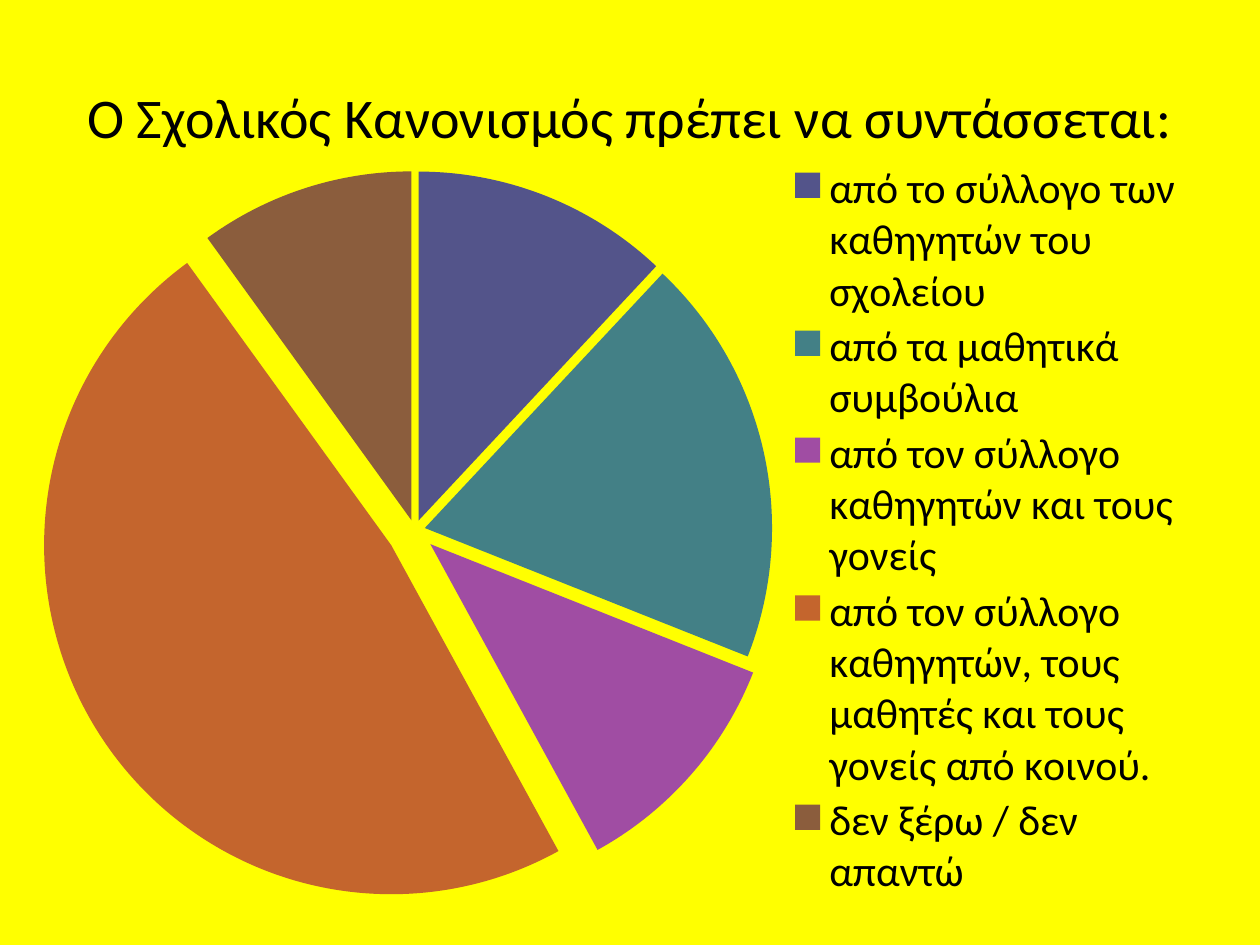
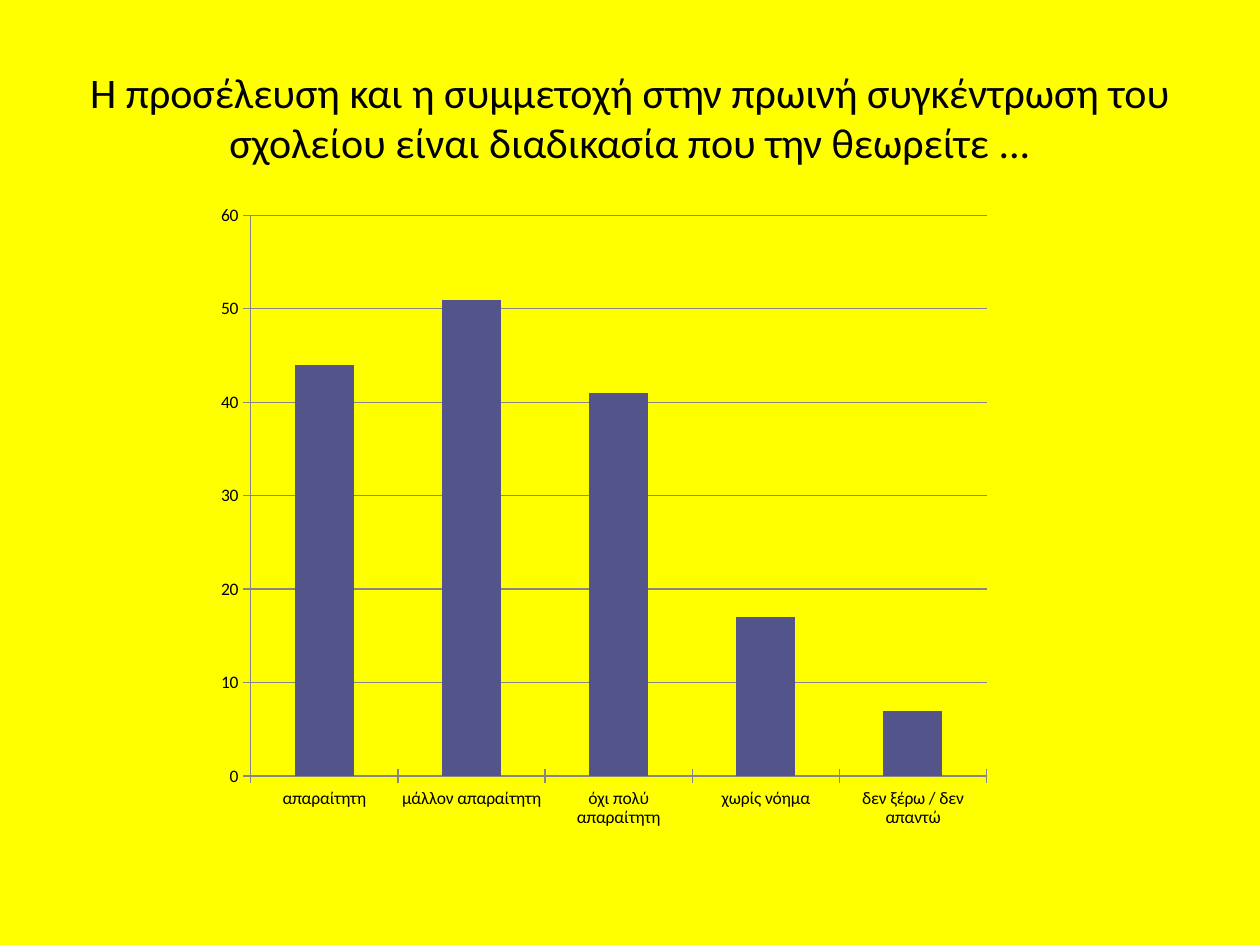
from lxml import etree
from pptx import Presentation
from pptx.chart.data import CategoryChartData
from pptx.dml.color import RGBColor
from pptx.enum.chart import XL_CHART_TYPE as ChartType, XL_LEGEND_POSITION as LegendPos, XL_TICK_MARK as Tick
from pptx.enum.text import MSO_ANCHOR, PP_ALIGN
from pptx.oxml.ns import qn
from pptx.util import Inches, Pt

BACKGROUND, INK, AXIS = "FFFF00", "000000", "868686"
FONT = "Calibri"
SLICE_COLORS = ["53548A", "438086", "A04DA3", "C4652D", "8B5D3D"]
SLICE_EXPLOSIONS = [3, 3, 6, 8, 3]
COMPILERS = [
    ("από το σύλλογο των καθηγητών του σχολείου", 12),
    ("από τα μαθητικά συμβούλια", 19),
    ("από τον σύλλογο καθηγητών και τους γονείς", 11),
    ("από τον σύλλογο καθηγητών, τους μαθητές και τους γονείς από κοινού.", 48),
    ("δεν ξέρω / δεν απαντώ", 10),
]
ASSEMBLY_VIEWS = [
    ("απαραίτητη", 44),
    ("μάλλον απαραίτητη", 51),
    ("όχι πολύ απαραίτητη", 41),
    ("χωρίς νόημα", 17),
    ("δεν ξέρω / δεν απαντώ", 7),
]


def rgb(value):
    return RGBColor.from_string(value)


def paint(fmt, color):
    fmt.fill.solid()
    fmt.fill.fore_color.rgb = rgb(color)


def style_font(font, size):
    for name, value in {"name": FONT, "size": Pt(size), "bold": False}.items():
        setattr(font, name, value)
    font.color.rgb = rgb(INK)


def add_slide(prs):
    s = prs.slides.add_slide(prs.slide_layouts[6])
    paint(s.background, BACKGROUND)
    return s


def add_title(s, text, size):
    tf = s.shapes.add_textbox(Inches(0.5), Inches(0.3), Inches(9), Inches(1.25)).text_frame
    tf.word_wrap = True
    tf.vertical_anchor = MSO_ANCHOR.MIDDLE
    p = tf.paragraphs[0]
    p.alignment = PP_ALIGN.CENTER
    r = p.add_run()
    r.text = text
    style_font(r.font, size)


def add_chart(s, kind, answers, box, size):
    data = CategoryChartData()
    data.categories = [label for label, _ in answers]
    data.add_series("Series 1", [value for _, value in answers])
    chart = s.shapes.add_chart(kind, *map(Inches, box), data).chart
    chart.has_title = False
    style_font(chart.font, size)
    return chart


def place(part, index, chart_box, box, **modes):
    """Fix a chart part at a box in inches from the chart's corner."""
    for old in part.findall(qn("c:layout")):
        part.remove(old)
    layout = etree.Element(qn("c:layout"))
    part.insert(index, layout)
    manual = etree.SubElement(layout, qn("c:manualLayout"))
    width, height = chart_box[2:]
    fractions = [length / full for length, full in zip(box, (width, height) * 2)]
    values = {**modes, "xMode": "edge", "yMode": "edge", **dict(zip("xywh", fractions))}
    for tag, value in values.items():
        etree.SubElement(manual, qn(f"c:{tag}")).set("val", str(value))


def place_plot(chart, chart_box, box):
    place(chart.plots[0]._element.getparent(), 0, chart_box, box, layoutTarget="inner")


def explode_slices(series):
    for d_pt, percent in zip(series._element.findall(qn("c:dPt")), SLICE_EXPLOSIONS):
        explosion = etree.Element(qn("c:explosion"))
        explosion.set("val", str(percent))
        d_pt.find(qn("c:spPr")).addprevious(explosion)


def add_pie(s, answers, box):
    chart = add_chart(s, ChartType.PIE, answers, box, 18)
    chart.has_legend = True
    legend = chart.legend
    legend.position = LegendPos.RIGHT
    legend.include_in_layout = False
    style_font(legend.font, 24)
    place(legend._element, 1, box, (5.83, 0.04, 3.26, 5.9))
    place_plot(chart, box, (0.14, 0.21, 5.54, 5.54))
    series = chart.plots[0].series[0]
    for i, color in enumerate(SLICE_COLORS):
        paint(series.points[i].format, color)
    explode_slices(series)


def add_columns(s, answers, box):
    chart = add_chart(s, ChartType.COLUMN_CLUSTERED, answers, box, 10)
    chart.has_legend = False
    place_plot(chart, box, (0.77, 0.82, 5.84, 4.45))
    plot = chart.plots[0]
    plot.gap_width = 150
    plot.vary_by_categories = False
    paint(plot.series[0].format, SLICE_COLORS[0])
    value_axis = chart.value_axis
    for name, value in {"minimum_scale": 0, "maximum_scale": 60, "major_unit": 10}.items():
        setattr(value_axis, name, value)
    value_axis.has_major_gridlines = True
    for axis in (chart.category_axis, value_axis):
        axis.major_tick_mark = Tick.CROSS
    for part in (chart.category_axis, value_axis, value_axis.major_gridlines):
        part.format.line.color.rgb = rgb(AXIS)
        part.format.line.width = Pt(0.75)


def main():
    prs = Presentation()
    prs.slide_width, prs.slide_height = Inches(10), Inches(7.5)

    s = add_slide(prs)
    add_title(s, "Ο Σχολικός Κανονισμός πρέπει να συντάσσεται:", 32)
    add_pie(s, COMPILERS, (0.35, 1.23, 9.15, 5.98))

    s = add_slide(prs)
    add_columns(s, ASSEMBLY_VIEWS, (1.22, 0.89, 7.72, 5.73))
    add_title(s, "Η προσέλευση και η συμμετοχή στην πρωινή συγκέντρωση του σχολείου είναι διαδικασία που την θεωρείτε ...", 24)

    prs.save("out.pptx")


if __name__ == "__main__":
    main()
